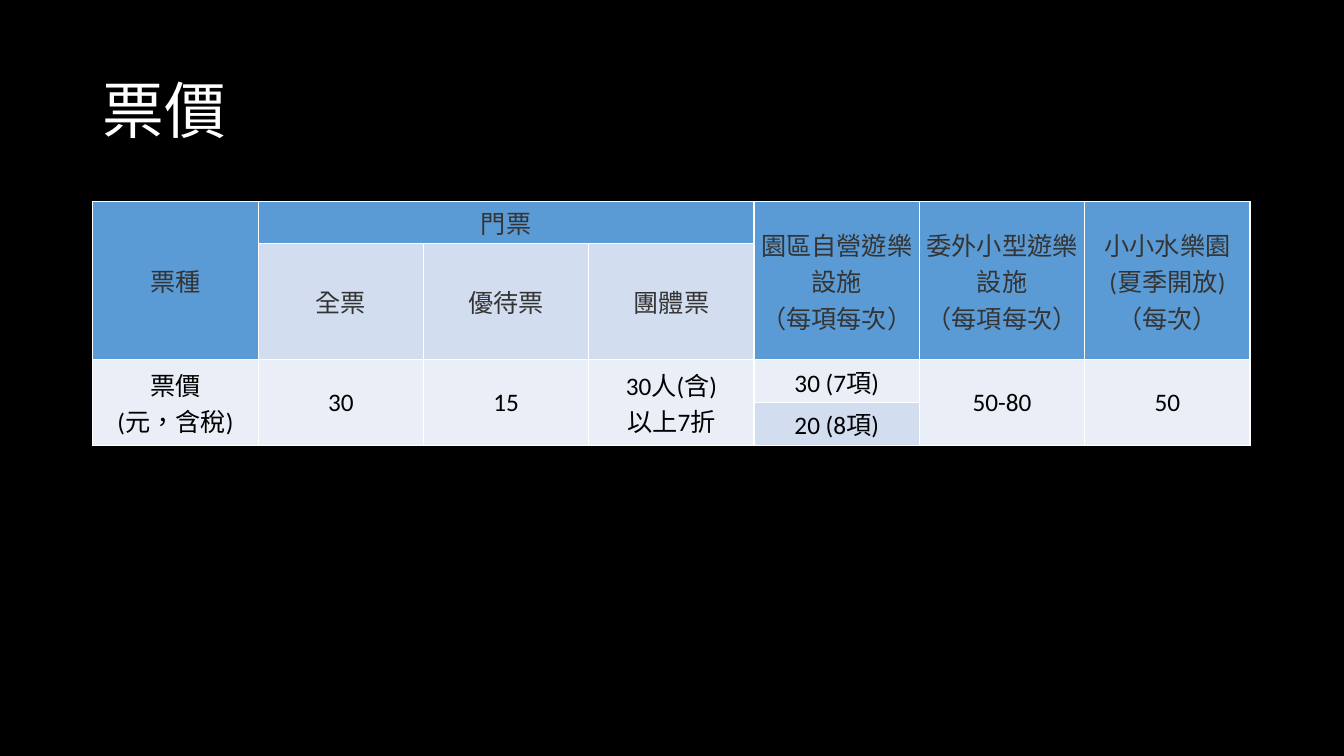
from dataclasses import dataclass

from lxml import etree
from pptx import Presentation
from pptx.dml.color import RGBColor
from pptx.enum import text
from pptx.oxml import ns
from pptx.util import Inches, Pt

COLORS = {
    "background": "000000",
    "white": "FFFFFF",
    "header": "5B9BD5",
    "header_text": "343434",
    "band": "D2DEEF",
    "body": "EAEFF7",
    "body_text": "000000",
}
LATIN_FONT = "Calibri"
CHINESE_FONT = "Noto Sans CJK TC"
LANGUAGE = "zh-TW"
COLUMN_COUNT = 7
COLUMN_WIDTH = 1.64
ROW_HEIGHTS = (0.42, 1.15, 0.42, 0.43)
LEFT, WIDTH = Inches(0.92), Inches(11.5)
TABLE_TOP = Inches(2)
CELL_MARGIN = Inches(0.03)


@dataclass
class TicketCell:
    row: int
    column: int
    content: str
    fill: str
    row_span: int = 1
    column_span: int = 1
    color: str = "body_text"


def header(row: int, column: int, content: str, rows: int = 1, columns: int = 1,
           fill: str = "header") -> TicketCell:
    return TicketCell(row, column, content, fill, rows, columns, "header_text")


TICKET_CELLS = [
    # Ticket types
    header(0, 0, "票種", rows=2),
    header(0, 1, "門票", columns=3),
    header(0, 4, "園區自營遊樂設施\n（每項每次）", rows=2),
    header(0, 5, "委外小型遊樂設施\n（每項每次）", rows=2),
    header(0, 6, "小小水樂園\n(夏季開放)\n（每次）", rows=2),
    header(1, 1, "全票", fill="band"),
    header(1, 2, "優待票", fill="band"),
    header(1, 3, "團體票", fill="band"),
    # Prices
    TicketCell(2, 0, "票價\n(元，含稅)", "body", 2),
    TicketCell(2, 1, "30", "body", 2),
    TicketCell(2, 2, "15", "body", 2),
    TicketCell(2, 3, "30人(含)\n以上7折", "body", 2),
    TicketCell(2, 4, "30 (7項)", "body"),
    TicketCell(3, 4, "20 (8項)", "band"),
    TicketCell(2, 5, "50-80", "body", 2),
    TicketCell(2, 6, "50", "body", 2),
]


def rgb(name: str) -> RGBColor:
    return RGBColor.from_string(COLORS[name])


def write_text(frame, content: str, *, size: float, color: str, font: str = LATIN_FONT,
               align=text.PP_ALIGN.LEFT, line_spacing: float = 1.0) -> None:
    frame.word_wrap = True
    paragraph = frame.paragraphs[0]
    paragraph.alignment = align
    paragraph.line_spacing = line_spacing
    for index, line in enumerate(content.split("\n")):
        if index:
            paragraph.add_line_break()
        run = paragraph.add_run()
        run.text = line
        run.font.size = Pt(size)
        run.font.name = font
        run.font.color.rgb = rgb(color)
        run_properties = run.font._element
        run_properties.set("lang", LANGUAGE)
        etree.SubElement(run_properties, ns.qn("a:ea"), typeface=CHINESE_FONT)


def add_borders(cell) -> None:
    properties = cell._tc.get_or_add_tcPr()
    for side in ("lnL", "lnR", "lnT", "lnB"):
        line = etree.SubElement(properties, ns.qn(f"a:{side}"), w=str(Pt(1)))
        fill = etree.SubElement(line, ns.qn("a:solidFill"))
        etree.SubElement(fill, ns.qn("a:srgbClr"), val=COLORS["white"])


def add_title(slide) -> None:
    title = slide.shapes.add_textbox(LEFT, Inches(0.4), WIDTH, Inches(1.45))
    title.text_frame.vertical_anchor = text.MSO_ANCHOR.MIDDLE
    write_text(title.text_frame, "票價", size=44, color="white", font=CHINESE_FONT,
               line_spacing=0.9)


def add_ticket_table(slide) -> None:
    table = slide.shapes.add_table(
        len(ROW_HEIGHTS), COLUMN_COUNT, LEFT, TABLE_TOP,
        Inches(COLUMN_WIDTH * COLUMN_COUNT), Inches(sum(ROW_HEIGHTS))).table
    for column in table.columns:
        column.width = Inches(COLUMN_WIDTH)
    for row, height in zip(table.rows, ROW_HEIGHTS):
        row.height = Inches(height)
    for cell in table.iter_cells():
        add_borders(cell)

    for ticket in TICKET_CELLS:
        cell = table.cell(ticket.row, ticket.column)
        if ticket.row_span > 1 or ticket.column_span > 1:
            cell.merge(table.cell(ticket.row + ticket.row_span - 1,
                                  ticket.column + ticket.column_span - 1))
        cell.fill.solid()
        cell.fill.fore_color.rgb = rgb(ticket.fill)
        cell.vertical_anchor = text.MSO_ANCHOR.MIDDLE
        cell.margin_left = cell.margin_right = CELL_MARGIN
        cell.margin_top = cell.margin_bottom = CELL_MARGIN
        write_text(cell.text_frame, ticket.content, size=18, color=ticket.color,
                   align=text.PP_ALIGN.CENTER)


def main() -> None:
    presentation = Presentation()
    presentation.slide_width = Inches(13.33)
    presentation.slide_height = Inches(7.5)
    slide = presentation.slides.add_slide(presentation.slide_layouts[6])
    slide.background.fill.solid()
    slide.background.fill.fore_color.rgb = rgb("background")
    add_title(slide)
    add_ticket_table(slide)
    presentation.save("out.pptx")


if __name__ == "__main__":
    main()
